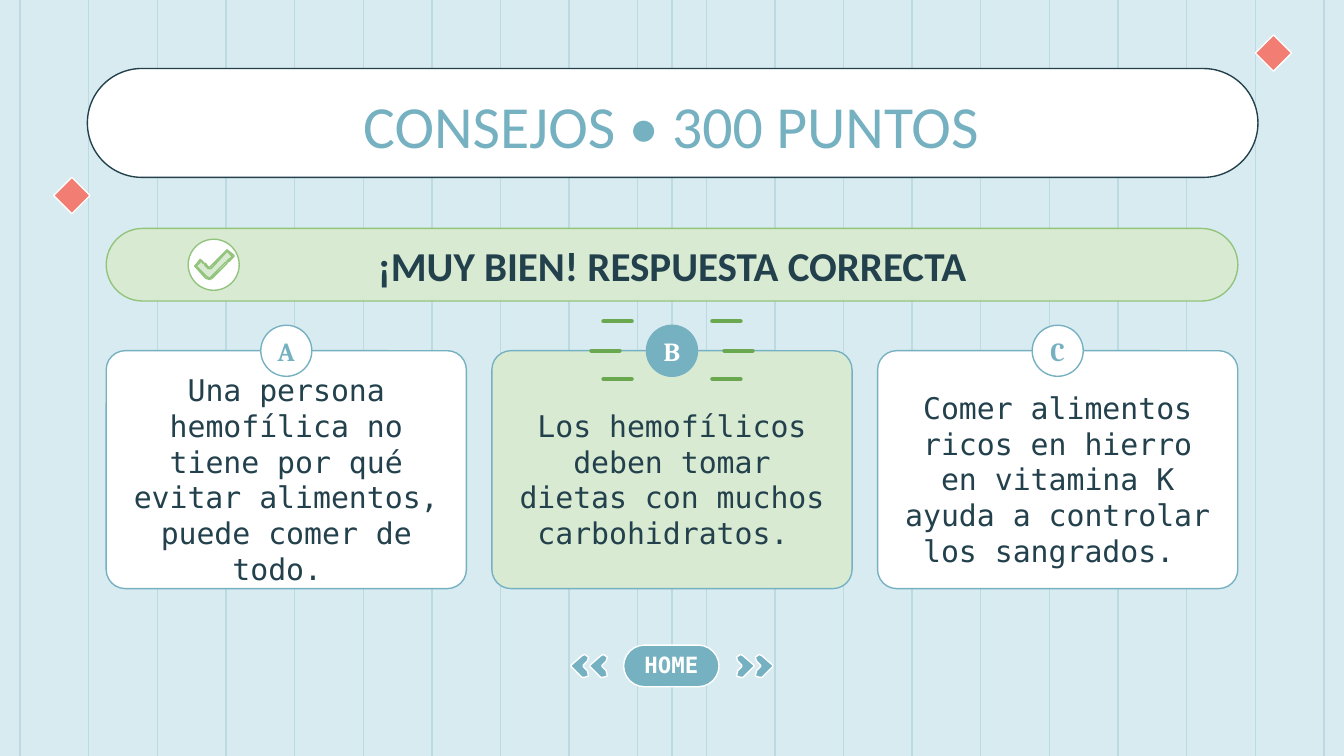
from pptx import Presentation
from pptx.dml.color import RGBColor
from pptx.enum.shapes import MSO_CONNECTOR, MSO_SHAPE
from pptx.enum.text import MSO_ANCHOR, PP_ALIGN
from pptx.oxml.ns import qn
from pptx.util import Inches, Pt
from lxml.etree import SubElement

SKY = RGBColor(0xD8, 0xEB, 0xF0)
STRIPE = RGBColor(0xBC, 0xDA, 0xE2)
WHITE = RGBColor(0xFF, 0xFF, 0xFF)
NAVY = RGBColor(0x23, 0x41, 0x4C)
TEAL = RGBColor(0x76, 0xB1, 0xC1)
CORAL = RGBColor(0xF2, 0x7D, 0x72)
MINT = RGBColor(0xD9, 0xEA, 0xD3)
GREEN = RGBColor(0x93, 0xC4, 0x7D)
SPARK = RGBColor(0x6A, 0xA8, 0x4F)
SANS, SERIF, MONO = "Calibri", "Cambria", "DejaVu Sans Mono"

WIDTH = 10
HEIGHT = WIDTH * 9 / 16
CARDS = [
    ("A", "Una persona hemofílica no tiene por qué evitar alimentos, puede comer de todo. "),
    ("B", "Los hemofílicos deben tomar dietas con muchos carbohidratos. "),
    ("C", "Comer alimentos ricos en hierro en vitamina K ayuda a controlar los sangrados. "),
]
RIGHT = "B"
TICK = [(1.69, 1.86), (1.56, 1.99), (1.55, 1.99), (1.5, 1.94), (1.45, 1.98),
        (1.53, 2.06), (1.56, 2.07), (1.58, 2.06), (1.73, 1.91)]
LOWER = [(1.49, 1.93), (1.45, 1.98), (1.53, 2.07), (1.56, 2.08), (1.58, 2.07),
         (1.69, 1.96), (1.68, 1.95), (1.57, 2.06), (1.56, 2.07), (1.54, 2.06),
         (1.46, 1.98), (1.5, 1.94), (1.51, 1.96), (1.51, 1.95)]
UPPER = [(1.69, 1.86), (1.56, 1.99), (1.55, 1.99), (1.53, 1.96), (1.52, 1.97),
         (1.55, 2), (1.57, 2), (1.69, 1.87), (1.73, 1.91), (1.69, 1.94),
         (1.7, 1.95), (1.74, 1.91), (1.74, 1.9)]
ARROW = [(0.04, 0), (0.01, 0.02), (0.02, 0.05), (0.05, 0.08), (0.05, 0.09),
         (0.02, 0.12), (0.01, 0.16), (0.04, 0.17), (0.06, 0.17),
         (0.14, 0.09), (0.14, 0.08), (0.06, 0.01)]


def paint(shape, fill, line):
    shape.shadow.inherit = False
    shape.fill.solid()
    shape.fill.fore_color.rgb = fill
    shape.line.color.rgb = line
    shape.line.width = Pt(0.75)


def add_form(slide, kind, box, fill, line, adjust=None):
    shape = slide.shapes.add_shape(kind, *map(Inches, box))
    paint(shape, fill, line)
    if adjust is not None:
        shape.adjustments[0] = adjust
    return shape


def add_path(slide, points, fill, line):
    first, *rest = [(Inches(x), Inches(y)) for x, y in points]
    builder = slide.shapes.build_freeform(*first)
    builder.add_line_segments(rest)
    paint(builder.convert_to_shape(), fill, line)


def add_line(slide, start, end, color, width, cap="flat"):
    line = slide.shapes.add_connector(
        MSO_CONNECTOR.STRAIGHT, *map(Inches, (*start, *end)))
    line.line.color.rgb = color
    line.line.width = Pt(width)
    line.line._get_or_add_ln().set("cap", cap)
    SubElement(line._element.spPr, qn("a:effectLst"))


def write(shape, text, size, font, color, insets, bold=False, anchor=MSO_ANCHOR.MIDDLE):
    frame = shape.text_frame
    frame.word_wrap = True
    frame.vertical_anchor = anchor
    (frame.margin_left, frame.margin_top,
     frame.margin_right, frame.margin_bottom) = map(Inches, insets)
    para = frame.paragraphs[0]
    para.text = text
    para.alignment = PP_ALIGN.CENTER
    para.font.size = Pt(size)
    para.font.name = font
    para.font.color.rgb = color
    para.font.bold = bold


def add_stripes(slide):
    count = 20
    for x in [WIDTH / 2] + [0.15 + 9.7 * i / (count - 1) for i in range(count)]:
        add_line(slide, (x, 0), (x, HEIGHT), STRIPE, 0.75)


def add_title(slide):
    add_form(slide, MSO_SHAPE.ROUNDED_RECTANGLE, (0.65, 0.51, 8.71, 0.81), WHITE, NAVY, 0.5)
    for x, y in ((0.4, 1.32), (9.34, 0.26)):
        add_form(slide, MSO_SHAPE.DIAMOND, (x, y, 0.27, 0.27), CORAL, WHITE)
    box = slide.shapes.add_textbox(*map(Inches, (1.31, 0.56, 7.37, 0.65)))
    write(box, "CONSEJOS • 300 PUNTOS", 32, SANS, TEAL,
          (0.1, 0.1, 0.1, 0.1), anchor=MSO_ANCHOR.TOP)


def add_cards(slide):
    for i, (letter, text) in enumerate(CARDS):
        left = 0.79 + 2.87 * i
        right = letter == RIGHT
        card = add_form(slide, MSO_SHAPE.ROUNDED_RECTANGLE, (left, 2.61, 2.68, 1.77),
                        MINT if right else WHITE, TEAL, 0.08)
        write(card, text, 16, MONO, NAVY, (0.1, 0.24, 0.1, 0.1))
        badge = add_form(slide, MSO_SHAPE.OVAL, (left + 1.15, 2.42, 0.38, 0.38),
                         TEAL if right else WHITE, TEAL)
        write(badge, letter, 14, SERIF, WHITE if right else TEAL, (0, 0.1, 0, 0.1), True)


def add_banner(slide):
    banner = add_form(slide, MSO_SHAPE.ROUNDED_RECTANGLE, (0.79, 1.7, 8.42, 0.54),
                      MINT, GREEN, 0.5)
    write(banner, "¡MUY BIEN! RESPUESTA CORRECTA", 22, SANS, NAVY, (0.3, 0.1, 0.3, 0.1), True)
    add_form(slide, MSO_SHAPE.OVAL, (1.4, 1.78, 0.38, 0.38), WHITE, GREEN)
    for points in (TICK, LOWER, UPPER):
        add_path(slide, points, MINT, GREEN)


def add_sparks(slide):
    for side in (-1, 1):
        for gap, y in ((0.3, 2.39), (0.39, 2.61), (0.3, 2.82)):
            near = WIDTH / 2 + side * gap
            add_line(slide, (near + side * 0.21, y), (near, y), SPARK, 2.25, "rnd")


def add_nav(slide):
    home = add_form(slide, MSO_SHAPE.ROUNDED_RECTANGLE, (4.64, 4.8, 0.71, 0.31),
                    TEAL, WHITE, 0.5)
    write(home, "HOME", 12, MONO, WHITE, (0.1, 0.08, 0.1, 0.1), True)
    for side in (-1, 1):
        for gap in (0.47, 0.61):
            points = [(WIDTH / 2 + side * (gap + x), 4.87 + y) for x, y in ARROW]
            add_path(slide, points, TEAL, WHITE)


def main():
    deck = Presentation()
    deck.slide_width, deck.slide_height = Inches(WIDTH), Inches(HEIGHT)
    slide = deck.slides.add_slide(deck.slide_layouts[6])
    slide.background.fill.solid()
    slide.background.fill.fore_color.rgb = SKY
    add_stripes(slide)
    add_title(slide)
    add_cards(slide)
    add_banner(slide)
    add_sparks(slide)
    add_nav(slide)
    deck.save("out.pptx")


if __name__ == "__main__":
    main()
